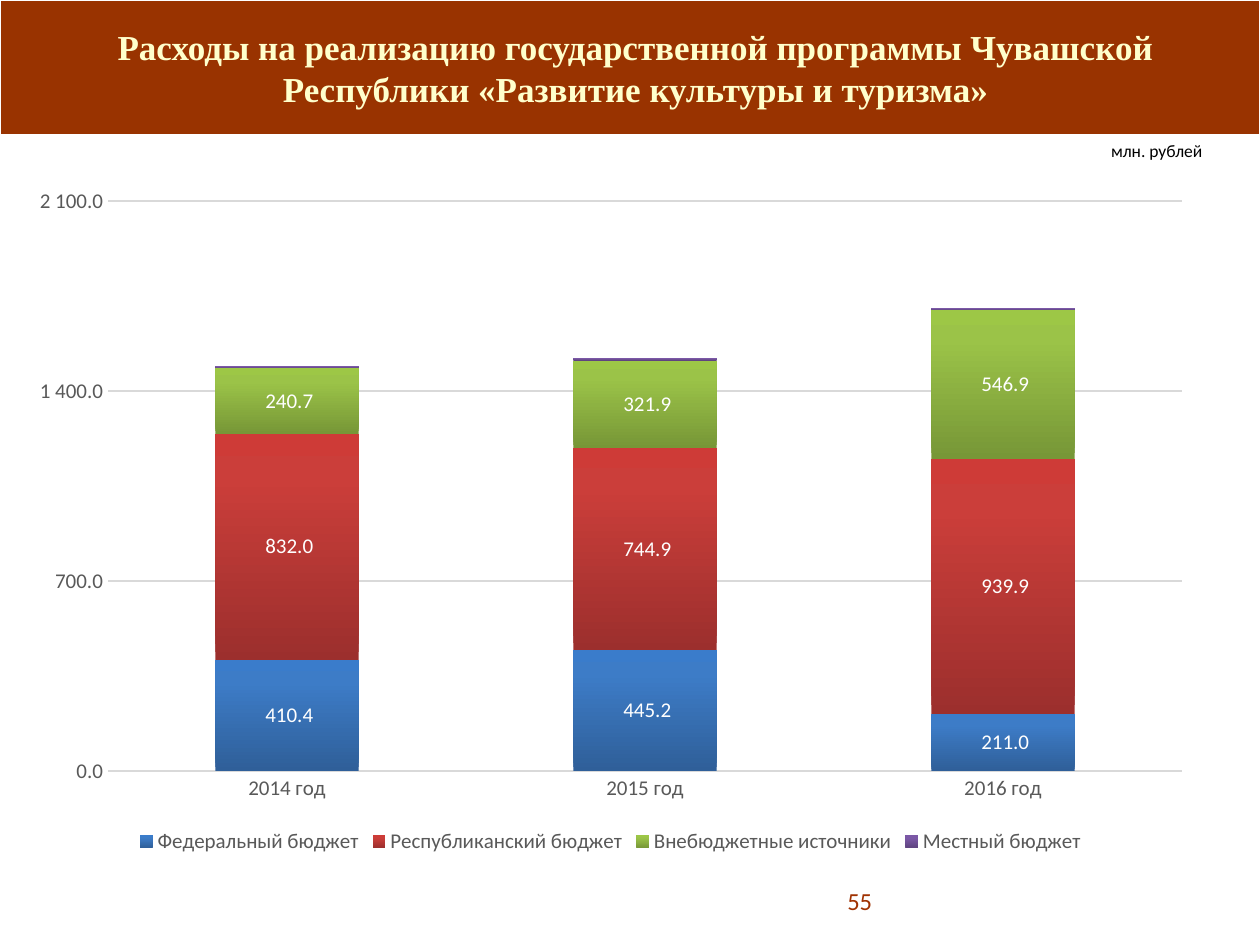
from lxml import etree
from pptx import Presentation
from pptx.chart.data import CategoryChartData
from pptx.dml.color import RGBColor
from pptx.enum.chart import XL_CHART_TYPE as ChartType, XL_LEGEND_POSITION as LegendPos
from pptx.enum.chart import XL_LABEL_POSITION as LabelPos, XL_TICK_MARK as Tick
from pptx.enum.shapes import MSO_SHAPE as Shape
from pptx.enum.text import MSO_ANCHOR as Anchor, PP_ALIGN as Align
from pptx.oxml import parse_xml
from pptx.oxml.ns import nsdecls, qn
from pptx.util import Inches, Pt

NUMBER_FORMAT = r"#\ ##0.0"
YEARS = ["2014 год", "2015 год", "2016 год"]
BUDGETS = [
    ("Федеральный бюджет", (410.4, 445.2, 211.0), ("2F5F99", "3D7CC7", "3A7CCB"), True),
    ("Республиканский бюджет", (832.0, 744.9, 939.9), ("9C2F2D", "CB3E3A", "CE3B37"), True),
    ("Внебюджетные источники", (240.7, 321.9, 546.9), ("779737", "9BC348", "9DC746"), True),
    ("Местный бюджет", (10, 10, 10), ("5F4480", "7B58A6", "7C57A8"), False),
]
PLOT_LAYOUT = {"x": 0.078, "y": 0.038, "w": 0.902, "h": 0.833}


def color(value):
    return RGBColor.from_string(value)


class SlideBuilder:
    body_font = "Calibri"
    title_font = "Times New Roman"
    gray = "595959"
    grid = "D9D9D9"

    def __init__(self, page):
        self.page = page

    def style_font(self, font, size, tint, name=None, bold=False):
        font.size = Pt(size)
        font.name = name or self.body_font
        font.bold = bold
        font.color.rgb = color(tint)

    def band(self, left, top, width, height, fill, line):
        band = self.page.shapes.add_shape(
            Shape.RECTANGLE, Inches(left), Inches(top), Inches(width), Inches(height))
        band.shadow.inherit = False
        band.fill.solid()
        band.fill.fore_color.rgb = color(fill)
        band.line.color.rgb = color(line)
        band.line.width = Pt(0.75)

    def text(self, left, top, width, height, words, size, tint,
             align=Align.LEFT, anchor=Anchor.TOP, name=None, bold=False):
        box = self.page.shapes.add_textbox(
            Inches(left), Inches(top), Inches(width), Inches(height))
        frame = box.text_frame
        frame.text = words
        frame.word_wrap = True
        frame.vertical_anchor = anchor
        para = frame.paragraphs[0]
        para.alignment = align
        self.style_font(para.runs[0].font, size, tint, name, bold)

    def stacked_chart(self, left, top, width, height, categories, budgets):
        data = CategoryChartData(number_format=NUMBER_FORMAT)
        data.categories = categories
        for name, values, _, _ in budgets:
            data.add_series(name, values)
        chart = self.page.shapes.add_chart(
            ChartType.COLUMN_STACKED, Inches(left), Inches(top),
            Inches(width), Inches(height), data).chart
        self.style_font(chart.font, 10, "000000")
        chart.has_title = False
        chart.has_legend = True
        chart.legend.position = LegendPos.BOTTOM
        chart.legend.include_in_layout = False
        self.style_font(chart.legend.font, 12, self.gray)
        plot = chart.plots[0]
        plot.gap_width = 150
        plot.overlap = 100
        plot.vary_by_categories = False
        for series, (_, _, stops, labelled) in zip(plot.series, budgets):
            self.gradient(series, stops)
            if labelled:
                self.labels(series)
        self.axes(chart)
        self.layout(chart)

    def gradient(self, series, stops):
        properties = series.format.fill and series._element.get_or_add_spPr()
        fill = etree.SubElement(properties, qn("a:gradFill"), rotWithShape="1")
        stop_list = etree.SubElement(fill, qn("a:gsLst"))
        for position, tint in zip((0, 80, 100), stops):
            stop = etree.SubElement(stop_list, qn("a:gs"), pos=str(position * 1000))
            etree.SubElement(stop, qn("a:srgbClr"), val=tint)
        etree.SubElement(fill, qn("a:lin"), ang=str(270 * 60000), scaled="0")

    def labels(self, series):
        labels = series.data_labels
        labels.show_value = True
        labels.number_format = NUMBER_FORMAT
        labels.number_format_is_linked = False
        labels.position = LabelPos.CENTER
        self.style_font(labels.font, 12, "FFFFFF")

    def axes(self, chart):
        for axis in (chart.category_axis, chart.value_axis):
            axis.major_tick_mark = Tick.NONE
            axis.minor_tick_mark = Tick.NONE
            self.style_font(axis.tick_labels.font, 12, self.gray)
        line = chart.category_axis.format.line
        line.color.rgb = color(self.grid)
        line.width = Pt(1)
        scale = chart.value_axis
        scale.minimum_scale = 0
        scale.maximum_scale = 2100
        scale.major_unit = 700
        scale.format.line.fill.background()
        scale.tick_labels.number_format = NUMBER_FORMAT
        scale.tick_labels.number_format_is_linked = False
        grid_line = scale.major_gridlines.format.line
        grid_line.color.rgb = color(self.grid)
        grid_line.width = Pt(0.75)

    def layout(self, chart):
        area = chart._chartSpace.chart.plotArea
        for old in area.findall(qn("c:layout")):
            area.remove(old)
        modes = '<c:xMode val="edge"/><c:yMode val="edge"/>'
        sizes = "".join(f'<c:{key} val="{value}"/>' for key, value in PLOT_LAYOUT.items())
        area.insert(0, parse_xml(
            f'<c:layout {nsdecls("c")}><c:manualLayout><c:layoutTarget val="inner"/>'
            f'{modes}{sizes}</c:manualLayout></c:layout>'))


def main():
    deck = Presentation()
    deck.slide_width, deck.slide_height = Inches(10), Inches(7.5)
    builder = SlideBuilder(deck.slides.add_slide(deck.slide_layouts[6]))
    builder.band(0, 0, 10, 1.07, "993300", "FFFFFF")
    builder.text(0.83, 0, 8.43, 1.07,
                 "Расходы на реализацию государственной программы Чувашской "
                 "Республики «Развитие культуры и туризма»",
                 20, "FFFFCC", Align.CENTER, Anchor.MIDDLE, builder.title_font, True)
    builder.stacked_chart(0.12, 1.39, 9.45, 5.43, YEARS, BUDGETS)
    builder.text(8.72, 1.06, 0.94, 0.27, "млн. рублей", 10, "000000")
    builder.text(5.87, 6.95, 1.15, 0.4, "55", 14, "A03202", Align.RIGHT, Anchor.MIDDLE)
    deck.save("out.pptx")


if __name__ == "__main__":
    main()
